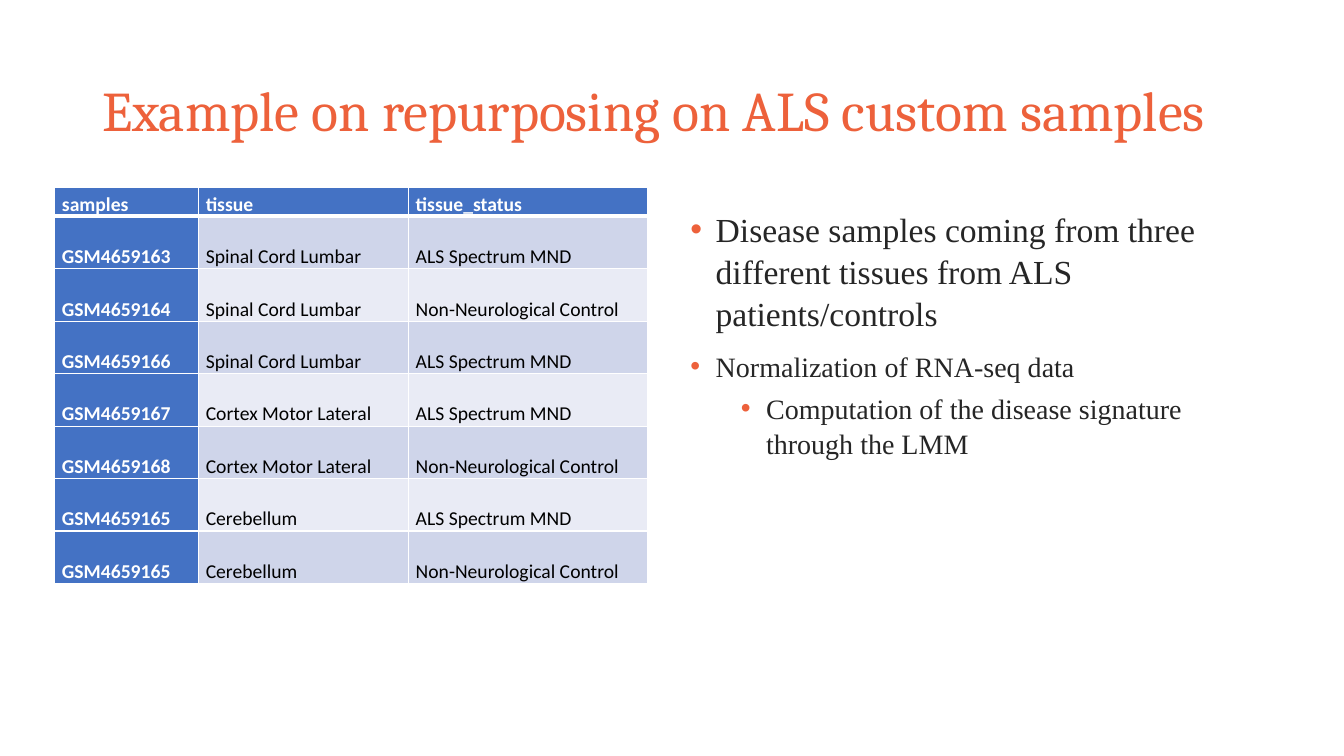
from lxml.etree import SubElement
from pptx import Presentation
from pptx.dml.color import RGBColor
from pptx.enum.text import MSO_ANCHOR, MSO_AUTO_SIZE, PP_ALIGN
from pptx.oxml import parse_xml
from pptx.oxml.ns import nsdecls, qn
from pptx.util import Emu, Pt

PX = 9525
COLORS = {
    "accent": "ED613B",
    "text": "262626",
    "header": "4472C4",
    "band_dark": "CFD5EA",
    "band_light": "E9EBF5",
    "white": "FFFFFF",
    "black": "000000",
}
SAMPLES = [
    ("samples", "tissue", "tissue_status"),
    ("GSM4659163", "Spinal Cord Lumbar", "ALS Spectrum MND"),
    ("GSM4659164", "Spinal Cord Lumbar", "Non-Neurological Control"),
    ("GSM4659166", "Spinal Cord Lumbar", "ALS Spectrum MND"),
    ("GSM4659167", "Cortex Motor Lateral", "ALS Spectrum MND"),
    ("GSM4659168", "Cortex Motor Lateral", "Non-Neurological Control"),
    ("GSM4659165", "Cerebellum", "ALS Spectrum MND"),
    ("GSM4659165", "Cerebellum", "Non-Neurological Control"),
]
# text, level, size, space before
POINTS = [
    ("Disease samples coming from three different tissues from ALS patients/controls", 0, 24, 0),
    ("Normalization of RNA-seq data", 0, 20, 10),
    ("Computation of the disease signature through the LMM", 1, 20, 5),
]


def px(length):
    return Emu(length * PX)


def rgb(name):
    return RGBColor.from_string(COLORS[name])


def set_font(paragraph, face, size, color, bold=False):
    font = paragraph.font
    font.name, font.size, font.bold = face, Pt(size), bold
    font.color.rgb = rgb(color)


def place(shape, box):
    shape.left, shape.top, shape.width, shape.height = map(px, box)


def add_title(slide, box):
    title = slide.shapes.title
    place(title, box)
    frame = title.text_frame
    frame.text = "Example on repurposing on ALS custom samples"
    frame.vertical_anchor = MSO_ANCHOR.MIDDLE
    frame.auto_size = MSO_AUTO_SIZE.NONE
    heading = frame.paragraphs[0]
    heading.alignment = PP_ALIGN.LEFT
    heading.line_spacing = 0.9
    set_font(heading, "Cambria", 40, "accent")


def set_borders(cell, bottom_width):
    widths = {"lnL": 1, "lnR": 1, "lnT": 1, "lnB": bottom_width}
    properties = cell._tc.get_or_add_tcPr()
    for position, (side, width) in enumerate(widths.items()):
        properties.insert(position, parse_xml(
            f'<a:{side} {nsdecls("a")} w="{Pt(width)}"><a:solidFill>'
            f'<a:srgbClr val="{COLORS["white"]}"/></a:solidFill></a:{side}>'))


def fill_cell(cell, text, row, column):
    is_heading = row == 0 or column == 0
    band = "band_dark" if row % 2 else "band_light"
    cell.text = text
    cell.vertical_anchor = MSO_ANCHOR.BOTTOM
    cell.margin_left = cell.margin_right = px(7)
    cell.margin_top = cell.margin_bottom = 0
    cell.fill.solid()
    cell.fill.fore_color.rgb = rgb("header" if is_heading else band)
    set_borders(cell, 1 if row else 3)
    set_font(cell.text_frame.paragraphs[0], "Calibri", 14,
             "white" if is_heading else "black", is_heading)


def add_samples_table(slide, box):
    table = slide.shapes.add_table(len(SAMPLES), len(SAMPLES[0]), *map(px, box)).table
    table.first_col = True
    for column, width in zip(table.columns, (137, 200, 228)):
        column.width = px(width)
    for row, values in enumerate(SAMPLES):
        table.rows[row].height = px(50 if row else 28)
        for column, text in enumerate(values):
            fill_cell(table.cell(row, column), text, row, column)


def add_bullet(paragraph, level):
    properties = paragraph._p.get_or_add_pPr()
    properties.set("marL", str(px(24 + 48 * level)))
    properties.set("indent", str(px(-24)))
    bullet_color = SubElement(properties, qn("a:buClr"))
    SubElement(bullet_color, qn("a:srgbClr"), val=COLORS["accent"])
    SubElement(properties, qn("a:buFont"), typeface="Arial")
    SubElement(properties, qn("a:buChar"), char="•")


def add_points(slide, box):
    body = slide.placeholders[1]
    place(body, box)
    frame = body.text_frame
    frame.auto_size = MSO_AUTO_SIZE.NONE
    frame.text = "\n".join(point[0] for point in POINTS)
    for paragraph, (_, level, size, space) in zip(frame.paragraphs, POINTS):
        paragraph.level = level
        paragraph.line_spacing = 1.05
        paragraph.space_before = Pt(space)
        add_bullet(paragraph, level)
        set_font(paragraph, "Times New Roman", size, "text")


def main():
    deck = Presentation()
    deck.slide_width, deck.slide_height = px(1280), px(720)
    slide = deck.slides.add_slide(deck.slide_layouts[1])
    add_title(slide, (88, 38, 1104, 139))
    add_samples_table(slide, (52, 178, 565, 378))
    add_points(slide, (648, 192, 544, 426))
    deck.save("out.pptx")


if __name__ == "__main__":
    main()
